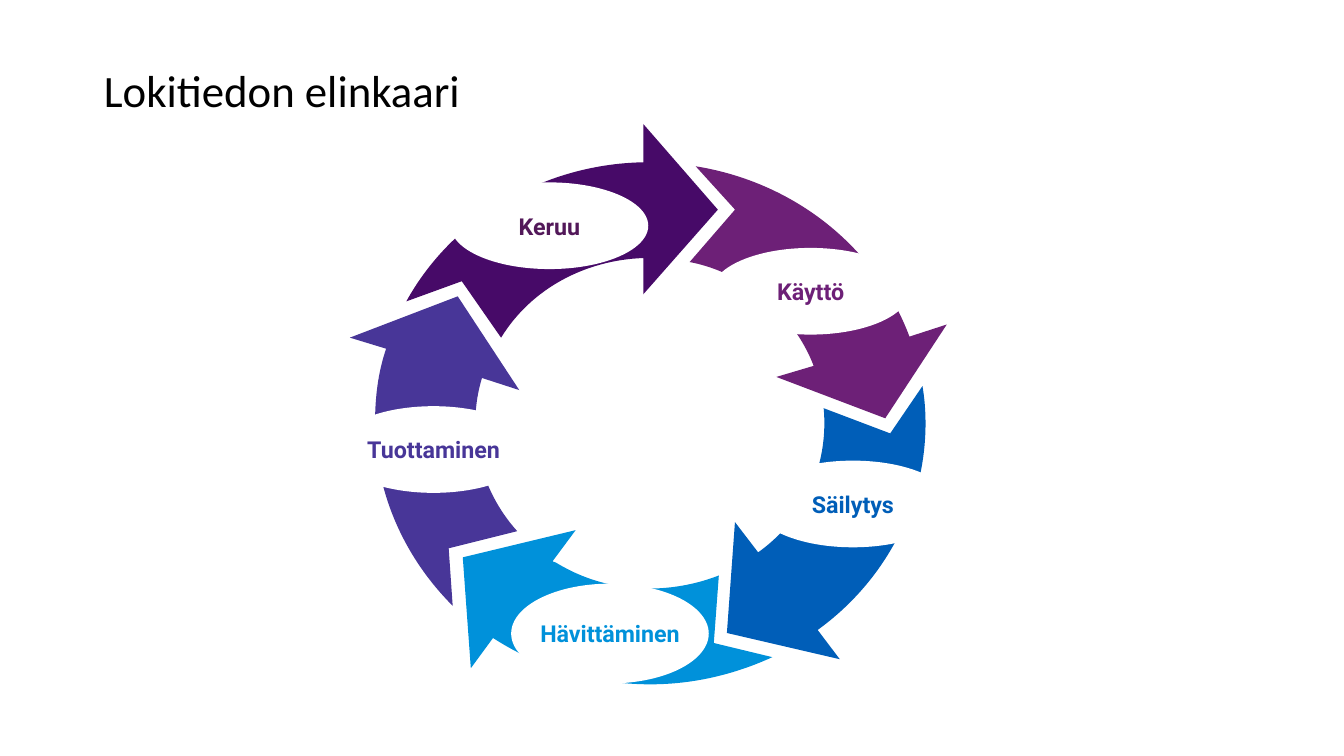
import pptx
import pptx.util
import pptx.dml.color
import pptx.enum.shapes
import pptx.enum.text
import pptx.oxml
import pptx.oxml.ns

Inches = pptx.util.Inches
Pt = pptx.util.Pt
qn = pptx.oxml.ns.qn

TITLE = "Lokitiedon elinkaari"
LABEL_WIDTH = 1.96

# Each stage: label, arrow colour, label colour, label (left, top, height), outline.
# An outline pair is a straight corner; six numbers are a Bezier curve.
STAGES = [
    ("Keruu", "470A68", "521859", (4.47, 1.81, 0.86), [
        (7.12, 2.08), (6.38, 1.23), (6.38, 1.61),
        (5.36, 1.63, 4.47, 2.19, 4.03, 2.99),
        (4.58, 2.79), (4.97, 3.35),
        (5.27, 2.86, 5.81, 2.58, 6.38, 2.56),
        (6.38, 2.92)]),
    ("Tuottaminen", "483698", "483698", (3.32, 4.03, 0.86), [
        (4.78, 3.75), (5.15, 3.87), (4.54, 2.94), (3.47, 3.35), (3.83, 3.46),
        (3.75, 3.69, 3.72, 3.94, 3.72, 4.2),
        (3.72, 4.9, 4.02, 5.54, 4.49, 6.01),
        (4.45, 5.44), (5.13, 5.27),
        (4.76, 4.86, 4.62, 4.28, 4.78, 3.75)]),
    ("Hävittäminen", "0091DA", "0091DA", (5.07, 5.79, 0.99), [
        (7.66, 6.52), (7.08, 6.38), (7.13, 5.71),
        (6.64, 5.9, 6.06, 5.89, 5.58, 5.62),
        (5.54, 5.6, 5.52, 5.58, 5.48, 5.57),
        (5.71, 5.26), (4.59, 5.53), (4.67, 6.63), (4.89, 6.33),
        (5.34, 6.62, 5.87, 6.79, 6.45, 6.79),
        (6.88, 6.79, 7.29, 6.69, 7.66, 6.52)]),
    ("Säilytys", "005EB8", "005EB8", (7.48, 4.57, 0.86), [
        (9.18, 4.2),
        (9.18, 4.07, 9.17, 3.95, 9.15, 3.83),
        (8.83, 4.3), (8.17, 4.05),
        (8.2, 4.38, 8.13, 4.72, 7.95, 5.02),
        (7.84, 5.2, 7.69, 5.36, 7.52, 5.48),
        (7.29, 5.18), (7.21, 6.28), (8.33, 6.54), (8.11, 6.25),
        (8.76, 5.78, 9.18, 5.03, 9.18, 4.2)]),
    ("Käyttö", "6D2077", "6D2077", (7.06, 2.46, 0.86), [
        (9.02, 3.34),
        (8.69, 2.46, 7.89, 1.81, 6.9, 1.65),
        (7.29, 2.08), (6.84, 2.6),
        (7, 2.63, 7.16, 2.69, 7.31, 2.77),
        (7.68, 2.98, 7.94, 3.29, 8.07, 3.63),
        (7.7, 3.74), (8.78, 4.15), (9.39, 3.22)]),
]


def color(hex_code):
    return pptx.dml.color.RGBColor.from_string(hex_code)


def style(shape, hex_code):
    shape.shadow.inherit = False
    shape.fill.solid()
    shape.fill.fore_color.rgb = color(hex_code)
    shape.line.fill.background()


def set_font(para, name, size, hex_code, bold):
    para.font.name = name
    para.font.size = Pt(size)
    para.font.bold = bold
    para.font.color.rgb = color(hex_code)


def add_arrow(ring, outline, hex_code):
    points = [(Inches(part[i]), Inches(part[i + 1]))
              for part in outline for i in range(0, len(part), 2)]
    builder = ring.shapes.build_freeform(*points[0], scale=1.0)
    builder.add_line_segments(points[1:], close=True)
    arrow = builder.convert_to_shape()
    style(arrow, hex_code)

    # Merge the three points of each curve into one Bezier segment
    segments = iter(list(arrow._element.iter(qn("a:lnTo"))))
    for part in outline[1:]:
        segment = next(segments)
        if len(part) == 6:
            curve = pptx.oxml.parse_xml(
                f'<a:cubicBezTo {pptx.oxml.ns.nsdecls("a")}/>')
            segment.addprevious(curve)
            for line in (segment, next(segments), next(segments)):
                curve.append(line[0])
                line.getparent().remove(line)


def add_label(ring, text, hex_code, left, top, height):
    oval = ring.shapes.add_shape(
        pptx.enum.shapes.MSO_SHAPE.OVAL,
        Inches(left), Inches(top), Inches(LABEL_WIDTH), Inches(height))
    style(oval, "FFFFFF")
    frame = oval.text_frame
    frame.word_wrap = False
    frame.vertical_anchor = pptx.enum.text.MSO_ANCHOR.MIDDLE
    para = frame.paragraphs[0]
    para.text = text
    para.alignment = pptx.enum.text.PP_ALIGN.CENTER
    set_font(para, "Roboto", 16.6, hex_code, True)


def main():
    deck = pptx.Presentation()
    deck.slide_width, deck.slide_height = Inches(13.33), Inches(7.5)
    page = deck.slides.add_slide(deck.slide_layouts[5])

    # Title
    title = page.shapes.title
    title.left, title.top = Inches(0.93), Inches(0)
    title.width, title.height = Inches(7.4), Inches(1.89)
    title.text_frame.vertical_anchor = pptx.enum.text.MSO_ANCHOR.MIDDLE
    title.text_frame.margin_bottom = Inches(0.09)
    para = title.text_frame.paragraphs[0]
    para.text = TITLE
    para.alignment = pptx.enum.text.PP_ALIGN.LEFT
    para.line_spacing = 0.9
    set_font(para, "Calibri", 32, "000000", False)

    # Ring of arrows, then the white labels over it
    ring = page.shapes.add_group_shape()
    for _, fill, _, _, outline in STAGES:
        add_arrow(ring, outline, fill)
    for text, _, text_color, place, _ in STAGES:
        add_label(ring, text, text_color, *place)

    deck.save("out.pptx")


if __name__ == "__main__":
    main()
